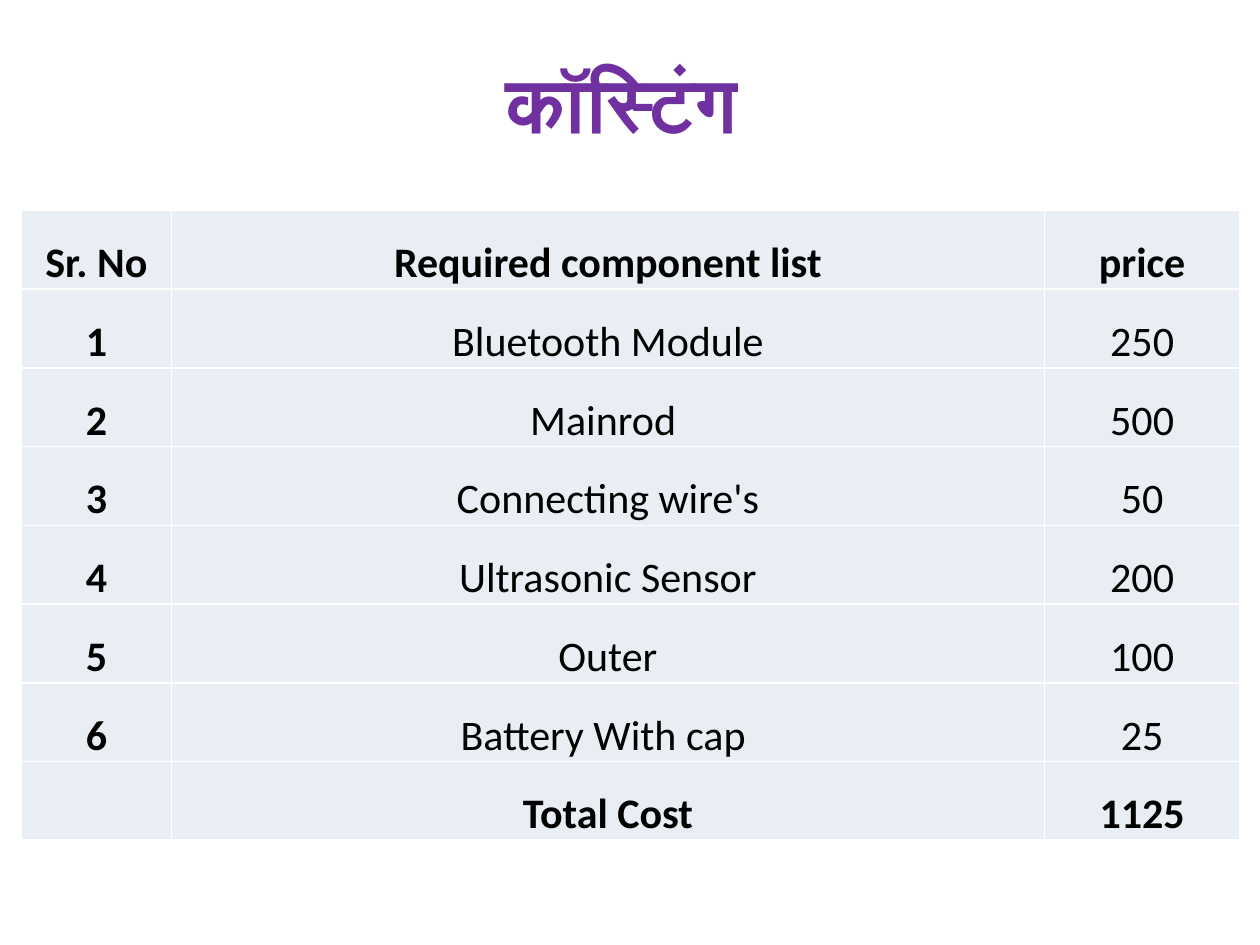
from typing import NamedTuple

from lxml import etree
from pptx import Presentation
from pptx.dml.color import RGBColor
from pptx.enum.text import MSO_ANCHOR, MSO_AUTO_SIZE, PP_ALIGN
from pptx.oxml.ns import qn
from pptx.util import Inches, Pt

CENTER = PP_ALIGN.CENTER
MIDDLE, BOTTOM = MSO_ANCHOR.MIDDLE, MSO_ANCHOR.BOTTOM
NO_AUTOFIT = MSO_AUTO_SIZE.NONE

PURPLE = RGBColor(0x70, 0x30, 0xA0)
NAVY = RGBColor(0x00, 0x20, 0x60)
BLACK = RGBColor(0x00, 0x00, 0x00)
WHITE = RGBColor(0xFF, 0xFF, 0xFF)
PALE_BLUE = RGBColor(0xE9, 0xED, 0xF4)

COLUMN_WIDTHS = (1.19, 6.93, 1.55)
TABLE_HEIGHT = 5
TITLE_INDENT = Inches(0.62)


class CostRow(NamedTuple):
    number: str
    component: str
    price: str
    bold: bool = False


COST_ROWS = (
    CostRow("Sr. No", "Required component list", "price", bold=True),
    CostRow("1", "Bluetooth Module", "250"),
    CostRow("2", "Mainrod ", "500"),
    CostRow("3", "Connecting wire's", "50"),
    CostRow("4", "Ultrasonic Sensor", "200"),
    CostRow("5", "Outer", "100"),
    CostRow("6", "Battery With cap ", "25"),
    CostRow("", "Total Cost", "1125", bold=True),
)


def add_text(para, text: str, *, size: float, color: RGBColor,
             font: str = "Calibri", bold: bool = False) -> None:
    span = para.add_run()
    span.text = text
    span.font.name = font
    span.font.size = Pt(size)
    span.font.bold = bold
    span.font.color.rgb = color


def add_borders(cell, color: RGBColor, width: float) -> None:
    properties = cell._tc.get_or_add_tcPr()
    for position, side in enumerate(("a:lnL", "a:lnR", "a:lnT", "a:lnB")):
        line = etree.Element(qn(side), w=str(Pt(width)))
        fill = etree.SubElement(line, qn("a:solidFill"))
        etree.SubElement(fill, qn("a:srgbClr"), val=str(color))
        properties.insert(position, line)


def format_cell(cell, text: str, bold: bool) -> None:
    cell.fill.solid()
    cell.fill.fore_color.rgb = PALE_BLUE
    add_borders(cell, WHITE, 1)
    cell.margin_left = cell.margin_right = cell.margin_top = Inches(0.01)
    cell.margin_bottom = 0
    cell.vertical_anchor = BOTTOM
    para = cell.text_frame.paragraphs[0]
    para.alignment = CENTER
    if text:
        add_text(para, text, size=24, color=BLACK, bold=bold)


def add_title(page) -> None:
    box = page.shapes.title
    box.left, box.top = 0, 0
    box.width, box.height = Inches(10), Inches(1.62)
    frame = box.text_frame
    frame.word_wrap = True
    frame.auto_size = NO_AUTOFIT
    frame.vertical_anchor = MIDDLE
    para = frame.paragraphs[0]
    para.alignment = CENTER
    # Hanging indent
    properties = para._p.get_or_add_pPr()
    properties.set("marL", str(TITLE_INDENT))
    properties.set("indent", str(-TITLE_INDENT))
    add_text(para, "कॉस्टिंग", size=44, color=PURPLE, font="Lato", bold=True)
    add_text(para, " ", size=36, color=NAVY, font="Lato", bold=True)


def add_cost_table(page) -> None:
    table = page.shapes.add_table(
        len(COST_ROWS), len(COLUMN_WIDTHS), Inches(0.17), Inches(1.67),
        Inches(sum(COLUMN_WIDTHS)), Inches(TABLE_HEIGHT)).table
    table.first_row = table.horz_banding = False
    for column, width in zip(table.columns, COLUMN_WIDTHS):
        column.width = Inches(width)
    for row, cost in zip(table.rows, COST_ROWS):
        row.height = Inches(TABLE_HEIGHT / len(COST_ROWS))
        # Serial numbers are always bold
        format_cell(row.cells[0], cost.number, True)
        format_cell(row.cells[1], cost.component, cost.bold)
        format_cell(row.cells[2], cost.price, cost.bold)


def main() -> None:
    deck = Presentation()
    deck.slide_width, deck.slide_height = Inches(10), Inches(7.5)
    page = deck.slides.add_slide(deck.slide_layouts[5])
    add_title(page)
    add_cost_table(page)
    deck.save("out.pptx")


if __name__ == "__main__":
    main()
